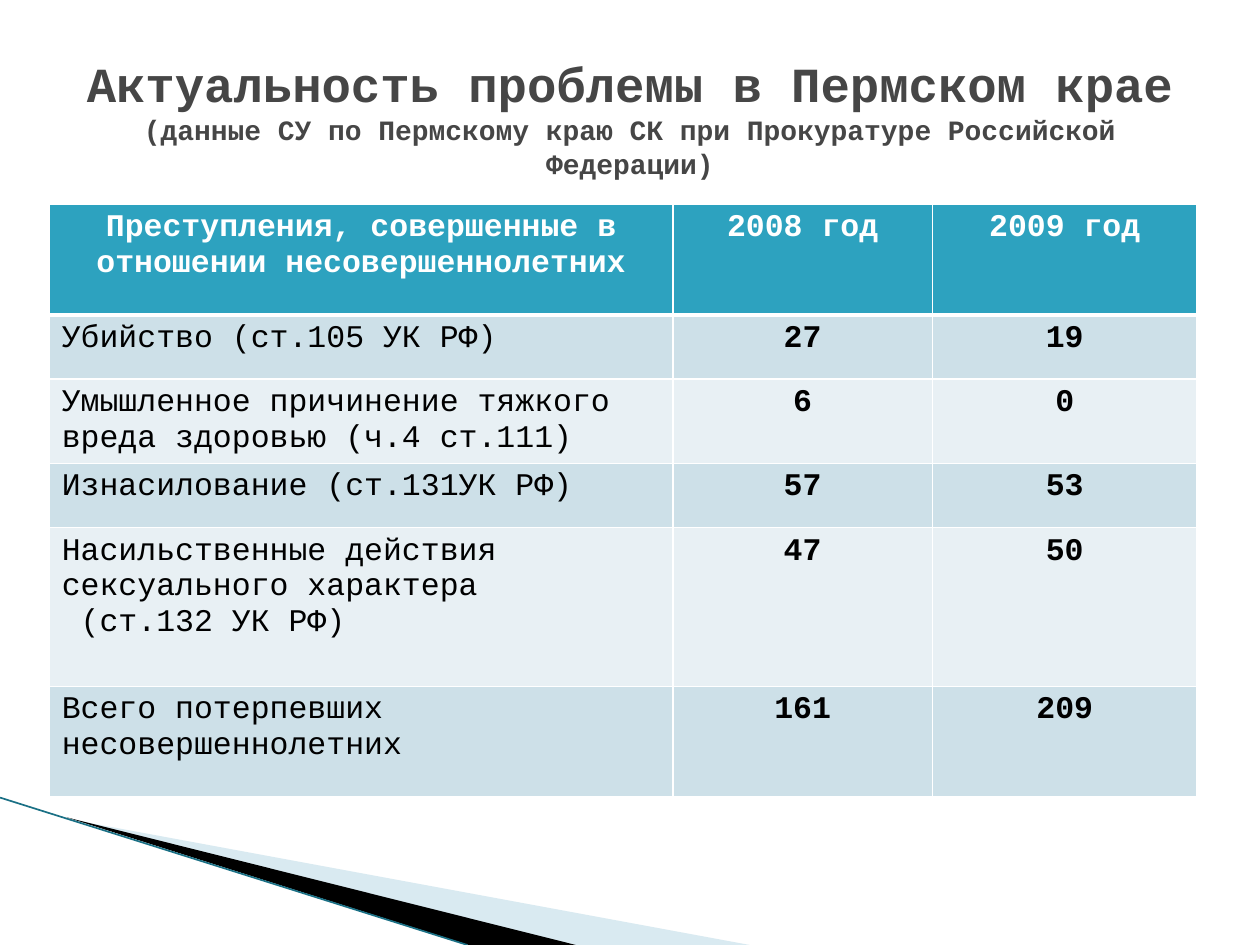
"""Builds a slide with a table of crimes against minors in the Perm region."""
from lxml.etree import SubElement
from pptx import Presentation
from pptx.dml.color import RGBColor
from pptx.enum.shapes import MSO_CONNECTOR as Connector
from pptx.enum.text import MSO_ANCHOR as Anchor, PP_ALIGN as Align
from pptx.oxml.ns import qn
from pptx.util import Inches, Pt

WHITE = RGBColor(0xFF, 0xFF, 0xFF)
BLACK = RGBColor(0, 0, 0)
TITLE_GREY = RGBColor(0x46, 0x46, 0x46)
HEADER_TEAL = RGBColor(0x2D, 0xA2, 0xBF)
BAND_DARK = RGBColor(0xCD, 0xE0, 0xE8)
BAND_LIGHT = RGBColor(0xE8, 0xF0, 0xF4)
WEDGE_BLUE = RGBColor(0xA0, 0xCB, 0xDC)
EDGE_TEAL = RGBColor(0x1A, 0x70, 0x85)

WIDTH, HEIGHT = 10, 7.5
COLUMNS = [4.95, 2.06, 2.1]
ROWS = [0.88, 0.51, 0.51, 0.51, 1.26, 0.88]
CRIMES = [
    ("Преступления, совершенные в отношении несовершеннолетних", "2008 год", "2009 год"),
    ("Убийство (ст.105 УК РФ)", "27", "19"),
    ("Умышленное причинение тяжкого вреда здоровью (ч.4 ст.111)", "6", "0"),
    ("Изнасилование (ст.131УК РФ)", "57", "53"),
    ("Насильственные действия сексуального характера\n (ст.132 УК РФ)", "47", "50"),
    ("Всего потерпевших несовершеннолетних", "161", "209"),
]


class SlideBuilder:
    """Holds the style and the current slide; lengths are shares of the slide."""

    font_name = "Courier New"

    def __init__(self, deck):
        self.deck = deck
        self.slide = deck.slides.add_slide(deck.slide_layouts[5])

    def at(self, x, y):
        """Turns shares of the slide into lengths."""
        return round(x * self.deck.slide_width), round(y * self.deck.slide_height)

    def style(self, font, size, color, bold=True):
        """Sets the look of a font."""
        font.name, font.size, font.bold = self.font_name, Pt(size), bold
        font.color.rgb = color

    def title(self, box, heading, source):
        """Fills and places the title with its smaller source note."""
        title = self.slide.shapes.title
        title.left, title.top = self.at(*box[:2])
        title.width, title.height = self.at(*box[2:])
        title.text_frame.word_wrap = True
        title.text_frame.vertical_anchor = Anchor.MIDDLE
        paragraph = title.text_frame.paragraphs[0]
        paragraph.alignment = Align.CENTER
        self.style(paragraph.font, 28, TITLE_GREY)
        for text, size in ((heading, 28), (source, 16)):
            run = paragraph.add_run()
            run.text = text
            self.style(run.font, size, TITLE_GREY)

    def wedge(self, points, color, opacity=100):
        """Draws a filled outline without a line."""
        start, *rest = [self.at(*point) for point in points]
        outline = self.slide.shapes.build_freeform(*start)
        outline.add_line_segments(rest)
        wedge = outline.convert_to_shape()
        wedge.shadow.inherit = False
        wedge.line.fill.background()
        wedge.fill.solid()
        wedge.fill.fore_color.rgb = color
        if opacity < 100:
            tint = wedge.fill._xPr.find(".//" + qn("a:srgbClr"))
            SubElement(tint, qn("a:alpha"), val=str(opacity * 1000))

    def edge(self, start, end, color, weight):
        """Draws a straight line."""
        edge = self.slide.shapes.add_connector(
            Connector.STRAIGHT, *self.at(*start), *self.at(*end))
        edge.line.color.rgb = color
        edge.line.width = Pt(weight)
        SubElement(edge._element.spPr, qn("a:effectLst"))

    def borders(self, cell, top, bottom):
        """Draws white borders, with the top and bottom weights given."""
        properties = cell._tc.get_or_add_tcPr()
        for side, weight in (("L", 1), ("R", 1), ("T", top), ("B", bottom)):
            line = SubElement(properties, qn(f"a:ln{side}"), w=str(Pt(weight)))
            SubElement(SubElement(line, qn("a:solidFill")), qn("a:srgbClr"), val=str(WHITE))

    def cell(self, cell, text, row, column):
        """Fills one table cell by its place in the grid."""
        header = row == 0
        self.borders(cell, 3 if row == 1 else 1, 3 if header else 1)
        cell.fill.solid()
        band = BAND_DARK if row % 2 else BAND_LIGHT
        cell.fill.fore_color.rgb = HEADER_TEAL if header else band
        cell.text = text
        emphasis = header or column > 0
        for paragraph in cell.text_frame.paragraphs:
            paragraph.alignment = Align.CENTER if emphasis else Align.LEFT
            self.style(paragraph.font, 18, WHITE if header else BLACK, emphasis)

    def table(self, corner, columns, rows, content):
        """Adds a table with the given column widths and row heights."""
        size = self.at(sum(columns) / WIDTH, sum(rows) / HEIGHT)
        table = self.slide.shapes.add_table(
            len(rows), len(columns), *self.at(*corner), *size).table
        for column, width in zip(table.columns, columns):
            column.width = Inches(width)
        for row, height in zip(table.rows, rows):
            row.height = Inches(height)
        for r, texts in enumerate(content):
            for c, text in enumerate(texts):
                self.cell(table.cell(r, c), text, r, c)


def main():
    """Builds and saves the deck."""
    deck = Presentation()
    deck.slide_width, deck.slide_height = Inches(WIDTH), Inches(HEIGHT)
    builder = SlideBuilder(deck)
    builder.wedge([(0.055, 0.867), (0.595, 1), (0.456, 1)], WEDGE_BLUE, 40)
    builder.wedge([(0.053, 0.865), (0.457, 1), (0.372, 1)], BLACK)
    builder.edge((0, 0.844), (0.371, 1), EDGE_TEAL, 0.95)
    builder.table((0.039, 0.216), COLUMNS, ROWS, CRIMES)
    builder.title((0.05, 0.04, 0.9, 0.167), "Актуальность проблемы в Пермском крае ",
                  "(данные СУ по Пермскому краю СК при Прокуратуре Российской Федерации)")
    deck.save("out.pptx")


if __name__ == "__main__":
    main()
